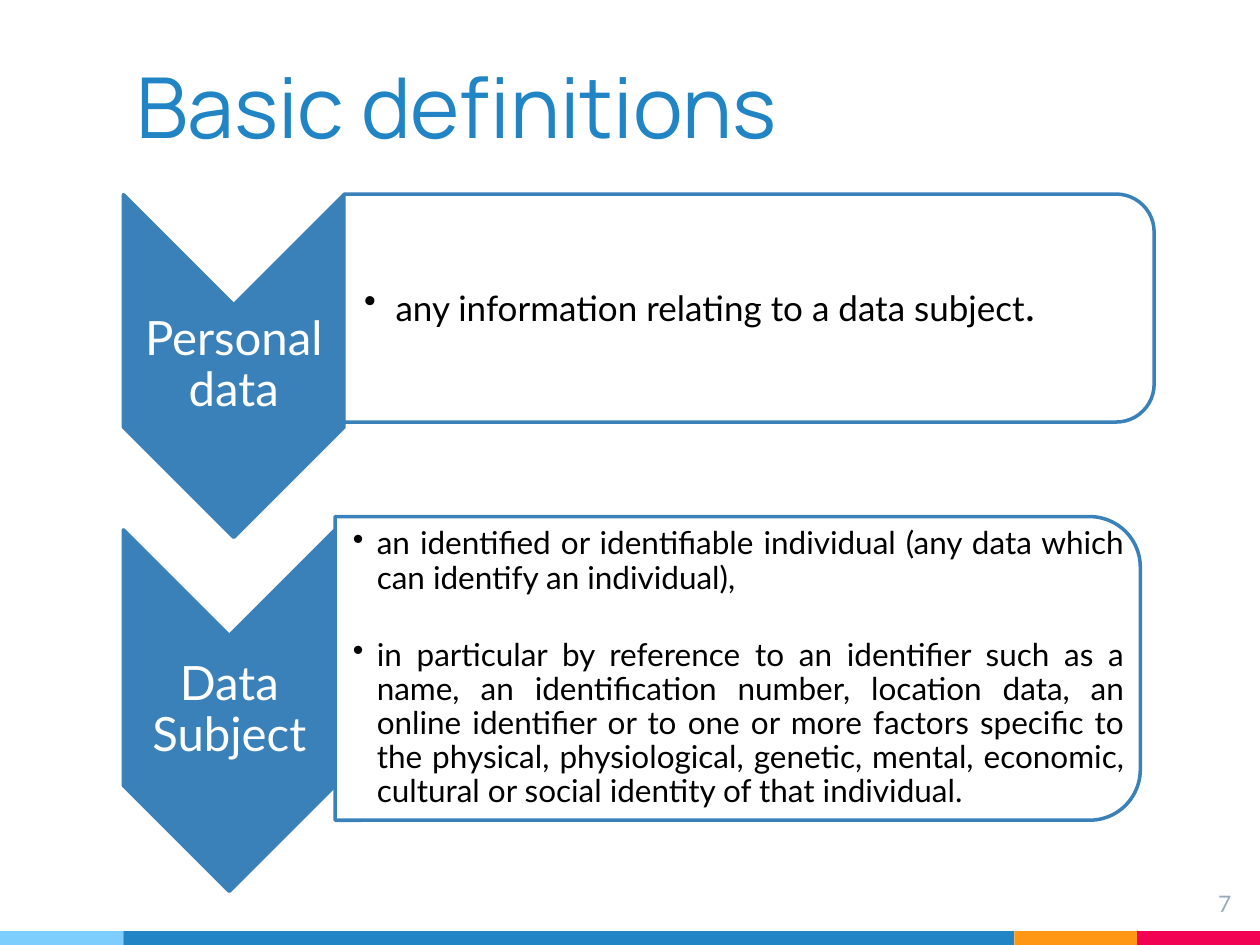
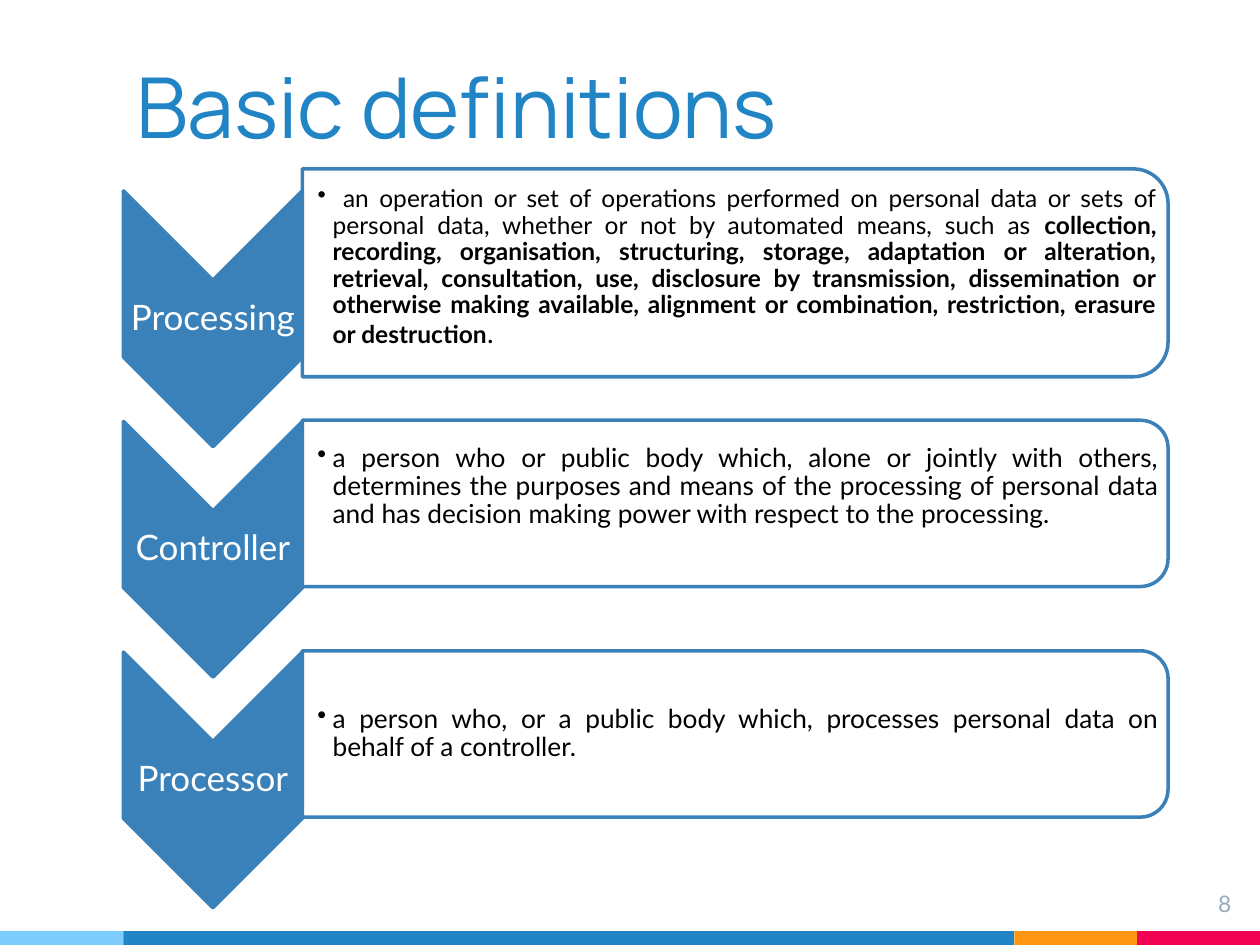
from dataclasses import dataclass

from lxml import etree
from pptx import Presentation
from pptx import util as u
from pptx.dml.color import RGBColor
from pptx.enum import shapes, text
from pptx.oxml import ns

SLIDE_WIDTH, SLIDE_HEIGHT = u.Inches(10), u.Inches(7.5)
COLUMNS = 100
CELL = SLIDE_WIDTH / COLUMNS
ROWS = SLIDE_HEIGHT / CELL

MARGIN = 9.8
BAND_HEIGHT = 1.1
BLUE = RGBColor(0x21, 0x85, 0xC5)
SKY = RGBColor(0x7E, 0xCE, 0xFD)
ORANGE = RGBColor(0xFF, 0x97, 0x15)
CRIMSON = RGBColor(0xF2, 0x02, 0x53)
STEEL = RGBColor(0x3A, 0x81, 0xBA)
GREY = RGBColor(0x97, 0xAB, 0xBC)
WHITE = RGBColor(0xFF, 0xFF, 0xFF)
BLACK = RGBColor(0, 0, 0)
TITLE_FONT, BODY_FONT = "Manrope", "Lato"
BANDS = [(SKY, 9.8), (BLUE, 70.7), (ORANGE, 9.75), (CRIMSON, 9.75)]


@dataclass(frozen=True)
class Box:
    left: float
    top: float
    width: float
    height: float

    def emu(self) -> list[u.Emu]:
        return [u.Emu(round(cells * CELL))
                for cells in (self.left, self.top, self.width, self.height)]

    def turned(self) -> "Box":
        shift = (self.width - self.height) / 2
        return Box(self.left + shift, self.top - shift, self.height, self.width)


@dataclass(frozen=True)
class Piece:
    words: str
    bold: bool | None = None
    size: float | None = None


@dataclass(frozen=True)
class Definition:
    term: str
    term_size: float
    chevron: Box
    panel_top: float
    panel_width: float
    panel_height: float
    bullets: list[list[Piece]]
    size: float
    indent: float
    inset: float
    align: text.PP_ALIGN = text.PP_ALIGN.JUSTIFY
    gap: float = 0
    lift: float = 0


def style_font(font, name: str, size: float, color: RGBColor) -> None:
    font.name, font.size = name, u.Pt(size)
    font.color.rgb = color


def set_frame(frame, anchor: text.MSO_ANCHOR, inset: float, left: float | None = None) -> None:
    frame.word_wrap = True
    frame.auto_size = text.MSO_AUTO_SIZE.NONE
    frame.vertical_anchor = anchor
    frame.margin_top = frame.margin_right = frame.margin_bottom = u.Inches(inset)
    frame.margin_left = u.Inches(inset if left is None else left)


def add_solid(slide, kind: shapes.MSO_SHAPE, box: Box, fill: RGBColor, line: RGBColor | None = None):
    shape = slide.shapes.add_shape(kind, *box.emu())
    shape.shadow.inherit = False
    shape.fill.solid()
    shape.fill.fore_color.rgb = fill
    if line is None:
        shape.line.fill.background()
    else:
        shape.line.color.rgb = line
        shape.line.width = u.Pt(2)
    return shape


def add_turned(slide, kind: shapes.MSO_SHAPE, box: Box, fill: RGBColor):
    shape = add_solid(slide, kind, box.turned(), fill, STEEL)
    shape.rotation = 90
    return shape


def add_label(slide, box: Box, words: str, size: float, color: RGBColor,
              align: text.PP_ALIGN, anchor: text.MSO_ANCHOR, inset: float):
    frame = slide.shapes.add_textbox(*box.emu()).text_frame
    set_frame(frame, anchor, inset)
    paragraph = frame.paragraphs[0]
    paragraph.text = words
    paragraph.alignment = align
    style_font(paragraph.font, BODY_FONT, size, color)
    return paragraph


def add_bullet(paragraph, indent: float) -> None:
    properties = paragraph._p.get_or_add_pPr()
    properties.set("marL", str(u.Inches(indent)))
    properties.set("indent", str(-u.Inches(indent)))
    color = etree.SubElement(properties, ns.qn("a:buClr"))
    etree.SubElement(color, ns.qn("a:srgbClr"), val=str(BLACK))
    etree.SubElement(properties, ns.qn("a:buChar"), char="•")


def add_bullets(slide, box: Box, definition: Definition) -> None:
    frame = slide.shapes.add_textbox(*box.emu()).text_frame
    set_frame(frame, text.MSO_ANCHOR.MIDDLE, 0.01, definition.inset)
    for index, pieces in enumerate(definition.bullets):
        paragraph = frame.add_paragraph() if index else frame.paragraphs[0]
        add_bullet(paragraph, definition.indent)
        paragraph.alignment = definition.align
        paragraph.line_spacing = 0.9
        paragraph.space_before = u.Pt(definition.gap if index else 0)
        style_font(paragraph.font, BODY_FONT, definition.size, BLACK)
        for piece in pieces:
            run = paragraph.add_run()
            run.text = piece.words
            run.font.bold = piece.bold
            if piece.size:
                run.font.size = u.Pt(piece.size)


def add_definition(slide, definition: Definition) -> None:
    chevron = definition.chevron
    add_turned(slide, shapes.MSO_SHAPE.CHEVRON, chevron, STEEL)
    label = Box(chevron.left, chevron.top + chevron.width / 2,
                chevron.width, chevron.height - chevron.width)
    paragraph = add_label(slide, label, definition.term, definition.term_size, WHITE,
                          text.PP_ALIGN.CENTER, text.MSO_ANCHOR.MIDDLE, 0.01)
    paragraph.line_spacing = 0.9

    panel = Box(chevron.left + chevron.width, definition.panel_top,
                definition.panel_width, definition.panel_height)
    shape = add_turned(slide, shapes.MSO_SHAPE.ROUND_2_SAME_RECTANGLE, panel, WHITE)
    fill_color = shape.element.spPr.find(ns.qn("a:solidFill"))[0]
    etree.SubElement(fill_color, ns.qn("a:alpha"), val="90000")
    corner = panel.height / 6 * 0.29
    add_bullets(slide, Box(panel.left, panel.top + corner - definition.lift,
                           panel.width - corner, panel.height - 2 * corner), definition)


def move_bands_to_layout(slide, layout) -> None:
    left = 0
    for color, width in BANDS:
        box = Box(left, ROWS - BAND_HEIGHT, width, BAND_HEIGHT)
        band = add_solid(slide, shapes.MSO_SHAPE.RECTANGLE, box, color)
        layout.shapes.element.append(band.element)
        left += width


def set_title(slide, words: str) -> None:
    title = slide.shapes.title
    title.left, title.top, title.width, title.height = Box(MARGIN, 1.5, 83, 11.8).emu()
    set_frame(title.text_frame, text.MSO_ANCHOR.BOTTOM, 0.1)
    paragraph = title.text_frame.paragraphs[0]
    paragraph.text = words
    paragraph.alignment = text.PP_ALIGN.LEFT
    style_font(paragraph.font, TITLE_FONT, 48, BLUE)


def add_definitions_slide(presentation, layout, number: int, definitions: list[Definition]):
    slide = presentation.slides.add_slide(layout)
    set_title(slide, "Basic definitions")
    add_label(slide, Box(92.7, 69.6, 6, 4.6), str(number), 13, GREY,
              text.PP_ALIGN.RIGHT, text.MSO_ANCHOR.TOP, 0.1)
    for definition in definitions:
        add_definition(slide, definition)
    return slide


SUBJECT_DEFINITIONS = [
    Definition("Personal data", 27, Box(MARGIN, 15.45, 17.5, 27.2), 15.4, 64.3, 18.1,
               [[Piece("any information relating to a data subject"), Piece(".", size=24)]],
               20, 0.25, 0.16, text.PP_ALIGN.LEFT),
    Definition("Data Subject", 27, Box(MARGIN, 42.05, 16.8, 28.7), 41, 63.9, 24.1,
               [[Piece("an identified or identifiable individual (any data which can "
                       "identify an individual),")],
                [Piece("in particular by reference to an identifier such as a name, an "
                       "identification number, location data, an online identifier or to one "
                       "or more factors specific to the physical, physiological, genetic, "
                       "mental, economic, cultural or social identity of that individual.")]],
               18, 0.19, 0.14, gap=24.6),
]


def role_definition(row: int, term: str, pieces: list[Piece], lift: float = 0,
                    size: float = 15, height: float = 13.2, rise: float = 0) -> Definition:
    top = 15.15 + 18.3 * row
    return Definition(term, 20, Box(MARGIN, top, 14.2, 20.3), top - 0.1 - rise, 68.7, height,
                      [pieces], size, 0.12, 0.12, lift=lift)


ROLE_DEFINITIONS = [
    role_definition(0, "Processing", [
        Piece(" an operation or set of operations performed on personal data or sets of "
              "personal data, whether or not by automated means, such as "),
        Piece("collection, recording, organisation, structuring, storage, adaptation or "
              "alteration, retrieval, consultation, use, disclosure by transmission, "
              "dissemination or otherwise making available, alignment or combination, "
              "restriction, erasure or destruction", bold=True),
        Piece(".", size=16)], lift=0.4, size=14, height=16.5, rise=1.65),
    role_definition(1, "Controller", [
        Piece("a person who or public body which, alone or jointly with others, determines "
              "the purposes and means of the processing of personal data and has decision "
              "making power with respect to the processing.")], lift=1.3),
    role_definition(2, "Processor", [
        Piece("a person who, or a public body which, processes personal data on behalf of "
              "a controller.")]),
]


def main() -> None:
    presentation = Presentation()
    presentation.slide_width, presentation.slide_height = SLIDE_WIDTH, SLIDE_HEIGHT
    layout = presentation.slide_layouts.get_by_name("Title Only")
    for number, definitions in enumerate([SUBJECT_DEFINITIONS, ROLE_DEFINITIONS], start=7):
        slide = add_definitions_slide(presentation, layout, number, definitions)
    move_bands_to_layout(slide, layout)
    presentation.save("out.pptx")


if __name__ == "__main__":
    main()
